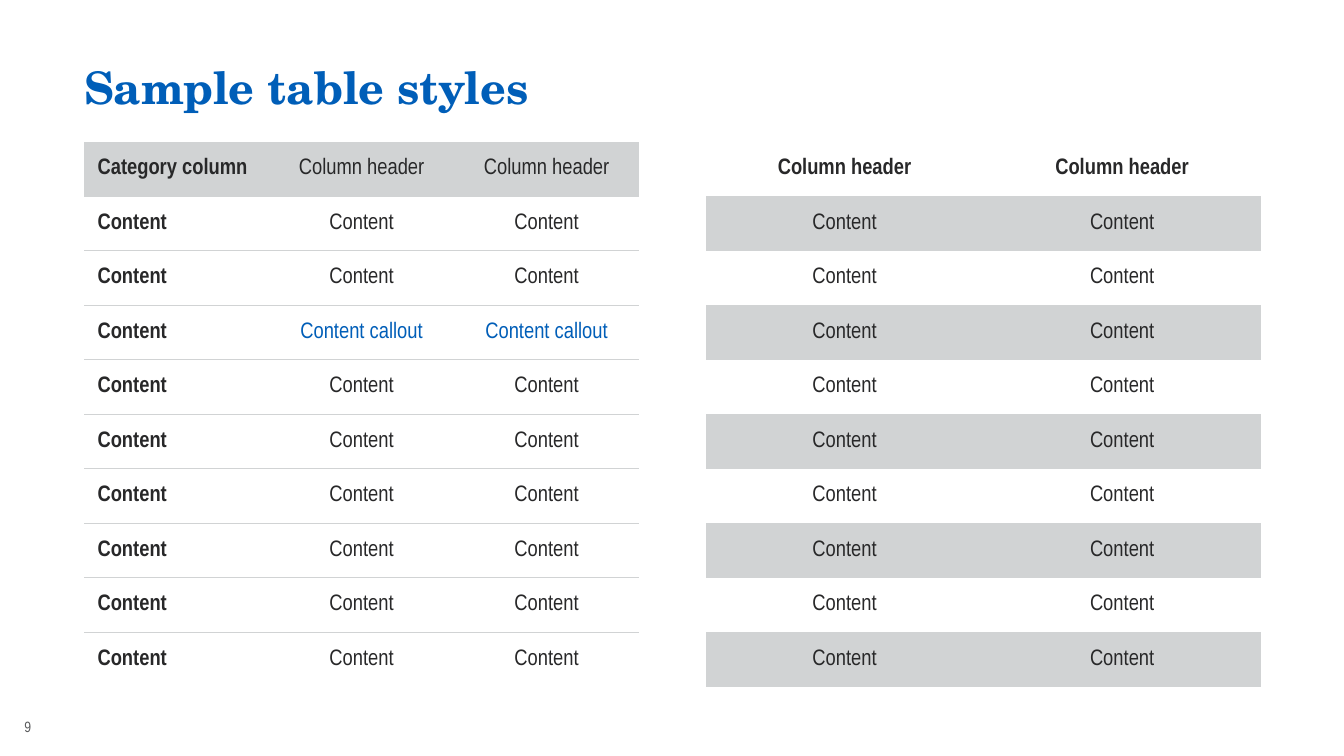
from lxml import etree
from pptx import Presentation
from pptx import util as u
from pptx.dml.color import RGBColor
from pptx.enum import text
from pptx.oxml import ns

BLUE = RGBColor(0x00, 0x5E, 0xB8)
INK = RGBColor(0x28, 0x28, 0x29)
GREY = RGBColor(0xD1, 0xD3, 0xD4)
FOOTER = RGBColor(0x58, 0x59, 0x5B)
WHITE = RGBColor(0xFF, 0xFF, 0xFF)

BODY_FONT = "Arial Narrow"
TITLE_FONT = "TeX Gyre Schola"

LEFT, RIGHT = 1.59, 13.34
TABLE_TOP, TABLE_WIDTH, ROW_HEIGHT = 2.68, 10.49, 1.03
CONTENT_ROWS = 9
CALLOUT_ROW = 3


class Sheet:
    """Holds the text style and the current slide."""

    def __init__(self, slide, font=BODY_FONT, size=12):
        self.slide = slide
        self.font = font
        self.size = size

    def run(self, paragraph, words, color=INK, bold=False, font=None, size=None):
        run = paragraph.add_run()
        run.text = words
        run.font.name = font or self.font
        run.font.size = u.Pt(size or self.size)
        run.font.bold = bold
        run.font.color.rgb = color

    def label(self, left, top, width, height, words, **style):
        shape = self.slide.shapes.add_textbox(
            u.Cm(left), u.Cm(top), u.Cm(width), u.Cm(height))
        frame = shape.text_frame
        frame.word_wrap = True
        frame.margin_left = frame.margin_right = 0
        frame.margin_top = frame.margin_bottom = 0
        frame.vertical_anchor = text.MSO_ANCHOR.MIDDLE
        self.run(frame.paragraphs[0], words, **style)

    def borders(self, cell, ruled_sides):
        properties = cell._tc.get_or_add_tcPr()
        for index, side in enumerate("LRTB"):
            line = etree.Element(ns.qn(f"a:ln{side}"), w=str(u.Pt(0.5)))
            if side in ruled_sides:
                fill = etree.SubElement(line, ns.qn("a:solidFill"))
                etree.SubElement(fill, ns.qn("a:srgbClr"), val=str(GREY))
            else:
                etree.SubElement(line, ns.qn("a:noFill"))
            properties.insert(index, line)

    def table(self, left, rows, cell_style):
        """cell_style(row, column) gives fill, ruled sides, alignment, run style."""
        columns = len(rows[0])
        shape = self.slide.shapes.add_table(
            len(rows), columns, u.Cm(left), u.Cm(TABLE_TOP),
            u.Cm(TABLE_WIDTH), u.Cm(ROW_HEIGHT * len(rows)))
        table = shape.table
        table.first_row = table.horz_banding = False
        for column in table.columns:
            column.width = u.Cm(TABLE_WIDTH / columns)
        for r, row in enumerate(rows):
            table.rows[r].height = u.Cm(ROW_HEIGHT)
            for c, words in enumerate(row):
                fill, ruled_sides, alignment, style = cell_style(r, c)
                cell = table.cell(r, c)
                cell.fill.solid()
                cell.fill.fore_color.rgb = fill
                cell.vertical_anchor = text.MSO_ANCHOR.MIDDLE
                self.borders(cell, ruled_sides)
                paragraph = cell.text_frame.paragraphs[0]
                paragraph.alignment = alignment
                self.run(paragraph, words, **style)


def ruled_style(row, column):
    """Grey header, thin rules between rows, bold category column."""
    fill = WHITE if row else GREY
    ruled_sides = ("T" if row else "") + ("B" if row < CONTENT_ROWS else "")
    alignment = text.PP_ALIGN.CENTER if column else text.PP_ALIGN.LEFT
    color = BLUE if row == CALLOUT_ROW and column else INK
    return fill, ruled_sides, alignment, {"color": color, "bold": column == 0}


def banded_style(row, column):
    """Bold header over alternating grey and white rows."""
    fill = GREY if row % 2 else WHITE
    return fill, "", text.PP_ALIGN.CENTER, {"bold": row == 0}


def main():
    presentation = Presentation()
    presentation.slide_width = u.Cm(25.4)
    presentation.slide_height = u.Cm(14.29)
    sheet = Sheet(presentation.slides.add_slide(presentation.slide_layouts[6]))

    # Page number and title
    sheet.label(0.46, 13.56, 2.9, 0.33, "9", color=FOOTER, size=8)
    sheet.label(LEFT, 1.09, 22.23, 1.09, "Sample table styles",
                color=BLUE, bold=True, font=TITLE_FONT, size=24)

    # Table with ruled rows
    ruled_rows = [["Category column"] + ["Column header"] * 2]
    ruled_rows += [["Content"] * 3 for _ in range(CONTENT_ROWS)]
    ruled_rows[CALLOUT_ROW][1:] = ["Content callout"] * 2
    sheet.table(LEFT, ruled_rows, ruled_style)

    # Table with banded rows
    banded_rows = [["Column header"] * 2] + [["Content"] * 2] * CONTENT_ROWS
    sheet.table(RIGHT, banded_rows, banded_style)

    presentation.save("out.pptx")


if __name__ == "__main__":
    main()
